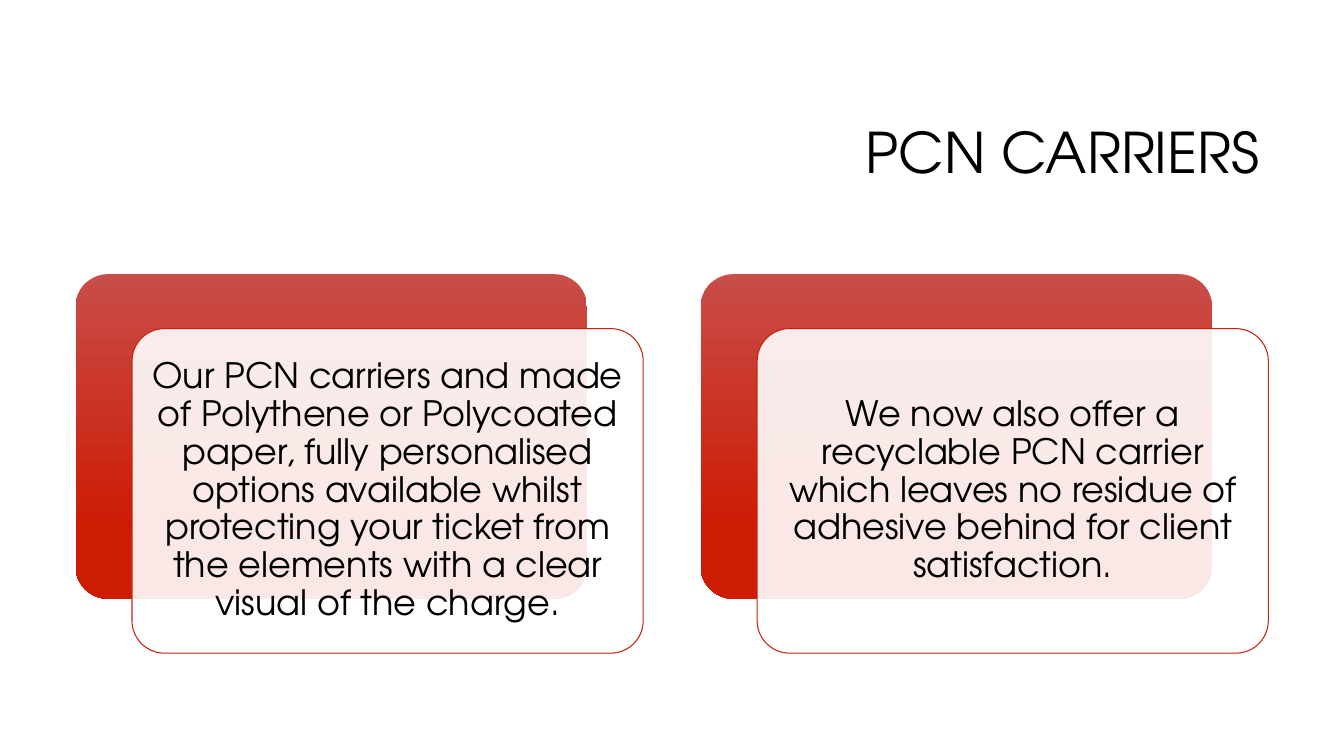
from lxml.etree import SubElement
from pptx import Presentation
from pptx.dml.color import RGBColor
from pptx.enum.shapes import MSO_SHAPE
from pptx.enum.text import MSO_ANCHOR, PP_ALIGN
from pptx.oxml.ns import qn
from pptx.util import Pt

PIXEL = 9144
FONT = "TeX Gyre Adventor"
CARD_TEXTS = [
    "Our PCN carriers and made of Polythene or Polycoated paper, fully personalised options "
    "available whilst protecting your ticket from the elements with a clear visual of the charge.",
    "We now also offer a recyclable PCN carrier which leaves no residue of adhesive behind "
    "for client satisfaction.",
]


def px(*lengths):
    """Turn pixel lengths into EMU."""
    return [length * PIXEL for length in lengths]


def color(value):
    """Turn a hex string into a colour."""
    return RGBColor.from_string(value)


def write_text(shape, text, size, alignment, side_inset, vertical_inset):
    """Write one vertically centred paragraph into a shape."""
    frame = shape.text_frame
    frame.word_wrap = True
    frame.vertical_anchor = MSO_ANCHOR.MIDDLE
    frame.margin_left, frame.margin_right = px(side_inset, side_inset)
    frame.margin_top, frame.margin_bottom = px(vertical_inset, vertical_inset)
    paragraph = frame.paragraphs[0]
    paragraph.text = text
    paragraph.alignment = alignment
    paragraph.line_spacing = 0.9
    paragraph.font.name = FONT
    paragraph.font.size = Pt(size)
    paragraph.font.color.rgb = color("000000")


def add_title(slide, left, top, width, height):
    """Place the right-aligned slide title in its box."""
    title = slide.shapes.add_textbox(*px(left, top, width, height))
    write_text(title, "PCN CARRIERS", 40, PP_ALIGN.RIGHT, 10, 5)


def add_rounded_panel(slide, left, top, width, height):
    """Add a rounded rectangle without a shadow."""
    panel = slide.shapes.add_shape(MSO_SHAPE.ROUNDED_RECTANGLE, *px(left, top, width, height))
    panel.adjustments[0] = 0.1
    panel.shadow.inherit = False
    return panel


def add_card(slide, text, left, top, width, height):
    """Place a red panel and a translucent text panel offset over it."""
    offset_x, offset_y = 56, 54
    panel_size = width - offset_x, height - offset_y

    back = add_rounded_panel(slide, left, top, *panel_size)
    back.line.fill.background()
    back.fill.gradient()
    back.fill.gradient_angle = 270
    stops = [(0, "C94D48"), (0.78, "CD1B04")]
    for stop, (position, value) in zip(back.fill.gradient_stops, stops):
        stop.position = position
        stop.color.rgb = color(value)

    front = add_rounded_panel(slide, left + offset_x, top + offset_y, *panel_size)
    front.fill.solid()
    front.fill.fore_color.rgb = color("FFFFFF")
    white = front.fill._xPr.find(qn("a:solidFill"))[0]
    SubElement(white, qn("a:alpha")).set("val", "90000")
    front.line.color.rgb = color("C4220D")
    front.line.width = Pt(0.75)
    write_text(front, text, 25, PP_ALIGN.CENTER, 10, 10)


def main():
    """Build and save the slide."""
    presentation = Presentation()
    presentation.slide_width, presentation.slide_height = px(1333, 750)
    slide = presentation.slides.add_slide(presentation.slide_layouts[6])
    add_title(slide, 317, 84, 942, 141)
    for index, text in enumerate(CARD_TEXTS):
        add_card(slide, text, 75 + index * 620, 272, 563, 376)
    presentation.save("out.pptx")


if __name__ == "__main__":
    main()
